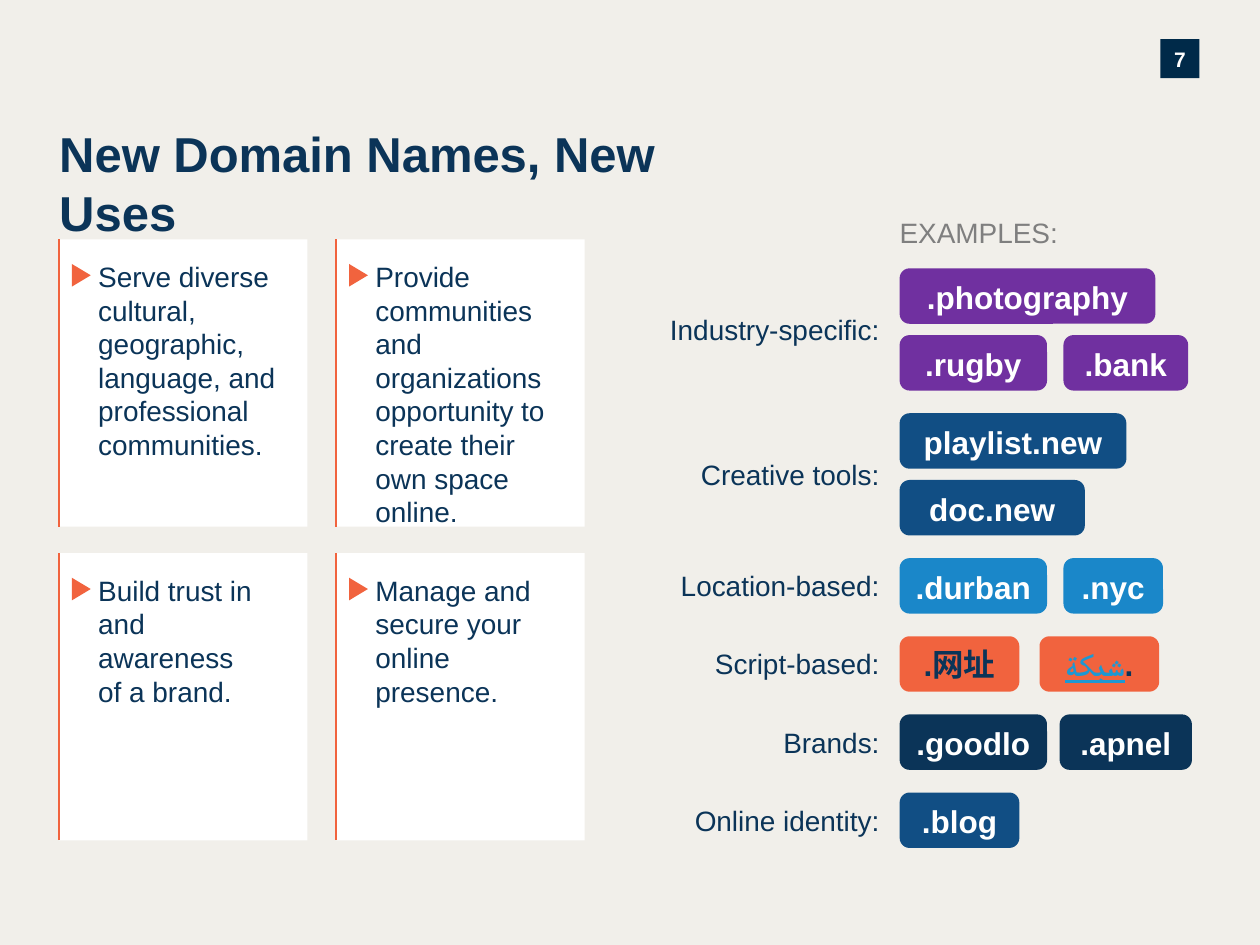
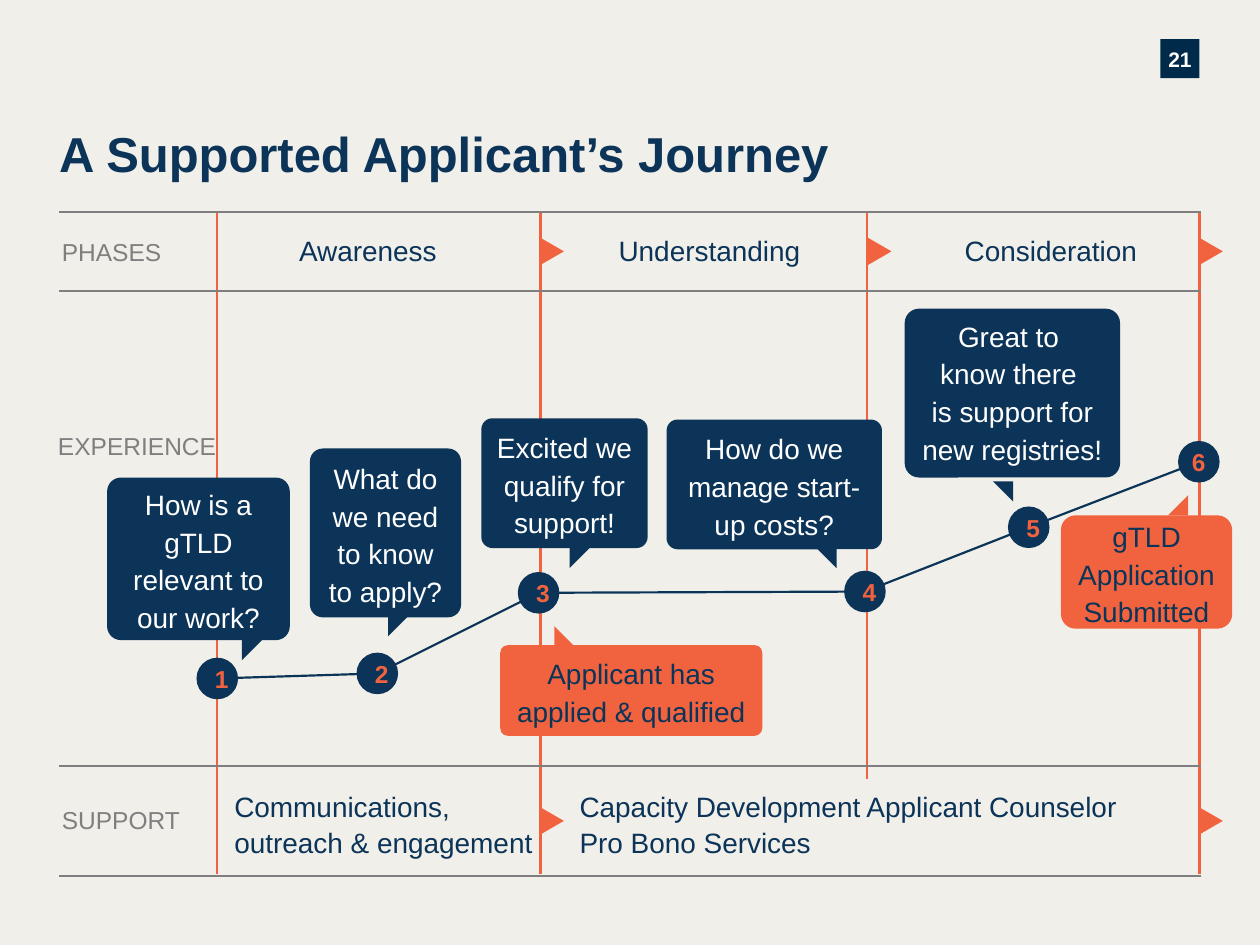
import copy
import dataclasses
import itertools
import typing

import lxml.etree
import pptx
import pptx.dml.color
import pptx.enum.shapes
import pptx.enum.text
import pptx.oxml.ns
import pptx.util

SHAPE = pptx.enum.shapes.MSO_SHAPE
ALIGN = pptx.enum.text.PP_ALIGN
ANCHOR = pptx.enum.text.MSO_ANCHOR
FIT = pptx.enum.text.MSO_AUTO_SIZE

FONT = "Arial"
COLORS = {
    "paper": "F1EFEA", "white": "FFFFFF", "ink": "0B3458", "badge": "002A49",
    "orange": "F1633E", "gray": "7F7F7F", "purple": "7030A0", "blue": "114E84",
    "sky": "1A87C9", "link": "1D98D3",
}

WIDTH, HEIGHT = pptx.util.Inches(10), pptx.util.Inches(7.5)
COLUMNS, ROWS = 100, 75


def col(count: float) -> int:
    return round(WIDTH * count / COLUMNS)


def row(count: float) -> int:
    return round(HEIGHT * count / ROWS)


def rgb(name: str) -> pptx.dml.color.RGBColor:
    return pptx.dml.color.RGBColor.from_string(COLORS[name])


class Box(typing.NamedTuple):
    """Left and width in grid columns, top and height in grid rows."""
    left: float
    top: float
    width: float
    height: float

    def place(self) -> tuple[int, int, int, int]:
        return col(self.left), row(self.top), col(self.width), row(self.height)


class Pill(typing.NamedTuple):
    text: str
    width: float
    left: float = 71.4


@dataclasses.dataclass
class Category:
    label: str
    color: str
    lines: list[list[Pill]]
    ink: str = "white"
    spacing: float = 1.06


@dataclasses.dataclass
class Callout:
    text: str
    box: Box
    tail: tuple[float, float]
    turn: int
    color: str = "ink"
    ink: str = "white"
    corner: float = 0.085
    bottom_margin: float = 0.8


class Step(typing.NamedTuple):
    left: float
    top: float
    margins: tuple[float, ...] = (1, 0.5, 1, 0.5)

    def center(self) -> tuple[float, float]:
        return self.left + STEP_SIZE / 2, self.top + STEP_SIZE / 2


def style_run(run, size: float, color: str, bold: bool, underline: bool = False) -> None:
    run.font.name = FONT
    run.font.size = pptx.util.Pt(size)
    run.font.bold = bold
    run.font.underline = underline
    run.font.color.rgb = rgb(color)


def write(shape, text: str, *, size: float = 16, color: str = "ink", bold: bool = False,
          underline: bool = False, align=ALIGN.LEFT, anchor=ANCHOR.TOP, spacing: float = 1,
          margins: tuple[float, ...] = (0, 0, 0, 0), fit=FIT.NONE) -> None:
    """Fill a shape with text: a newline starts a paragraph, a \\v breaks a line."""
    frame = shape.text_frame
    frame.word_wrap = True
    frame.auto_size = fit
    frame.vertical_anchor = anchor
    frame.margin_left, frame.margin_right = col(margins[0]), col(margins[2])
    frame.margin_top, frame.margin_bottom = row(margins[1]), row(margins[3])
    for index, line in enumerate(text.split("\n")):
        paragraph = frame.add_paragraph() if index else frame.paragraphs[0]
        paragraph.text = line
        paragraph.alignment = align
        paragraph.line_spacing = spacing
        for run in paragraph.runs:
            style_run(run, size, color, bold, underline)
        for line_break in paragraph._p.findall(pptx.oxml.ns.qn("a:br")):
            line_break.append(copy.deepcopy(paragraph.runs[0]._r.rPr))


def add_block(slide, kind, box: Box, color: str, turn: float = 0,
              corner: float | None = None):
    block = slide.shapes.add_shape(kind, *box.place())
    block.shadow.inherit = False
    block.fill.solid()
    block.fill.fore_color.rgb = rgb(color)
    block.line.fill.background()
    block.rotation = turn
    if corner is not None:
        block.adjustments[0] = corner
    return block


def add_text(slide, box: Box, text: str, **style):
    label = slide.shapes.add_textbox(*box.place())
    write(label, text, **style)
    return label


def add_rule(slide, start: tuple[float, float], end: tuple[float, float], color: str) -> None:
    rule = slide.shapes.add_connector(
        pptx.enum.shapes.MSO_CONNECTOR.STRAIGHT,
        col(start[0]), row(start[1]), col(end[0]), row(end[1]))
    rule.line.color.rgb = rgb(color)
    rule.line.width = pptx.util.Pt(1.25)
    lxml.etree.SubElement(rule._element.spPr, pptx.oxml.ns.qn("a:effectLst"))


def add_marker(slide, box: Box) -> None:
    """Orange triangle pointing right."""
    add_block(slide, SHAPE.ISOSCELES_TRIANGLE, box, "orange", turn=90)


def add_titled_slide(deck, title: str, title_box: Box, number: int):
    slide = deck.slides.add_slide(deck.slide_layouts.get_by_name("Title Only"))
    heading = slide.shapes.title
    heading.left, heading.top, heading.width, heading.height = title_box.place()
    write(heading, title, size=28, bold=True)
    badge = add_block(slide, SHAPE.RECTANGLE, Box(92.1, 3.1, 3.1, 3.1), "badge")
    write(badge, str(number), size=12, color="white", bold=True, align=ALIGN.CENTER,
          anchor=ANCHOR.MIDDLE, spacing=1.08)
    return slide


# Domain names: benefit cards and example pills

CARD_LEFT, CARD_TOP, CARD_WIDTH, CARD_HEIGHT = 4.7, 19, 19.7, 22.8
CARD_COLUMN_STEP, CARD_ROW_STEP = 22, 24.9
BENEFITS = [  # text, right margin
    ("Serve diverse\ncultural, geographic,\nlanguage, and professional communities.", 2.4),
    ("Provide communities and organizations opportunity to create their own space online.", 2),
    ("Build trust in and awareness of a brand.", 3.9),
    ("Manage and secure your online presence.", 2),
]

PILL_TOP, PILL_HEIGHT = 21.3, 4.4
LINE_STEP, CATEGORY_GAP = 5.3, 0.9
LABEL_HEIGHT = 2.7
ARABIC_WORD = "شبكة"
CATEGORIES = [
    Category("Industry-specific:", "purple", [
        [Pill(".photography", 20.3)],
        [Pill(".rugby", 11.7), Pill(".bank", 9.9, 84.4)]]),
    Category("Creative tools:", "blue", [
        [Pill("playlist.new", 18)], [Pill("doc.new", 14.7)]]),
    Category("Location-based:", "sky", [
        [Pill(".durban", 11.7), Pill(".nyc", 7.9, 84.4)]]),
    Category("Script-based:", "orange", [
        [Pill(".网址", 9.5), Pill(ARABIC_WORD, 9.5, 82.5)]], ink="ink", spacing=1),
    Category("Brands:", "ink", [
        [Pill(".goodlo", 11.7), Pill(".apnel", 10.5, 84.1)]]),
    Category("Online identity:", "blue", [[Pill(".blog", 9.5)]]),
]


def add_benefit(slide, index: int, text: str, right_margin: float) -> None:
    card_row, card_column = divmod(index, 2)
    left = CARD_LEFT + card_column * CARD_COLUMN_STEP
    top = CARD_TOP + card_row * CARD_ROW_STEP
    card = add_block(slide, SHAPE.RECTANGLE, Box(left, top, CARD_WIDTH, CARD_HEIGHT), "white")
    write(card, text, margins=(3.1, 1.6, right_margin, 2))
    add_marker(slide, Box(left + 0.85, top + 2.1, 1.8, 1.5))
    add_rule(slide, (left, top), (left, top + CARD_HEIGHT), "orange")


def add_pill(slide, pill: Pill, top: float, category: Category) -> None:
    is_arabic = pill.text == ARABIC_WORD
    block = add_block(slide, SHAPE.ROUNDED_RECTANGLE,
                      Box(pill.left, top, pill.width, PILL_HEIGHT),
                      category.color, corner=0.179)
    write(block, pill.text, size=18, bold=True, color="link" if is_arabic else category.ink,
          underline=is_arabic, align=ALIGN.CENTER, anchor=ANCHOR.MIDDLE,
          spacing=category.spacing)
    if is_arabic:
        dot = block.text_frame.paragraphs[0].add_run()
        dot.text = "."
        style_run(dot, 18, category.ink, bold=True)


def build_domain_names(deck) -> None:
    slide = add_titled_slide(deck, "New Domain Names, New Uses", Box(4.7, 9.8, 57.6, 5.6), 7)
    for index, (text, right_margin) in enumerate(BENEFITS):
        add_benefit(slide, index, text, right_margin)

    add_text(slide, Box(71.4, 17.1, 24.6, LABEL_HEIGHT), "EXAMPLES:", color="gray",
             fit=FIT.SHAPE_TO_FIT_TEXT)
    top = PILL_TOP
    for category in CATEGORIES:
        height = (len(category.lines) - 1) * LINE_STEP + PILL_HEIGHT
        add_text(slide, Box(46.4, top + (height - LABEL_HEIGHT) / 2, 23.4, LABEL_HEIGHT),
                 category.label, align=ALIGN.RIGHT, fit=FIT.SHAPE_TO_FIT_TEXT)
        for line in category.lines:
            for pill in line:
                add_pill(slide, pill, top, category)
            top += LINE_STEP
        top += CATEGORY_GAP


# Applicant's journey: phase grid, path of steps and callouts

PHASES = ["Awareness", "Understanding", "Consideration"]
PHASE_LEFT, PHASE_STEP = 17.1, 27.1
PHASE_EDGES = [(17.2, 69.4), (42.9, 69.4), (68.8, 61.8), (95.2, 69.4)]  # column, end row
BAND_ROWS = [16.8, 23.1, 60.8, 69.5]
BAND_LABELS = [("PHASES", 4.9, 18.8), ("EXPERIENCE", 4.6, 34.2), ("SUPPORT", 4.9, 63.9)]
MARKERS = [(42.7, 19), (68.7, 19), (95, 19), (42.7, 64.2), (95, 64.2)]
SUPPORT = [
    ("Communications, \voutreach & engagement", Box(17, 61.5, 25.9, 7.7), (1.6, 0, 0, 0)),
    ("Capacity Development Applicant Counselor \vPro Bono Services",
     Box(42.9, 61.5, 52.3, 7.7), (3.1, 0.5, 1, 0.5)),
]
STEP_SIZE = 3.3
STEPS = [Step(15.6, 52.2), Step(28.3, 51.8), Step(41.1, 45.4), Step(67, 45.3),
         Step(80, 40.2), Step(93.5, 35, margins=(0, 0, 0, 0))]
TAIL_SIZE = 1.6
# Quarter turns of a tail name the corner that holds its right angle
BOTTOM_LEFT, TOP_LEFT, TOP_RIGHT, BOTTOM_RIGHT = 0, 90, 180, 270
CALLOUTS = [
    Callout("How is a gTLD relevant to our work?", Box(8.5, 37.9, 14.5, 12.9),
            (19.2, 50.8), TOP_LEFT),
    Callout("What do we need to know to apply?", Box(24.6, 35.6, 12, 13.4),
            (30.8, 48.9), TOP_LEFT),
    Callout("Excited we qualify for support!", Box(38.2, 33.2, 13.2, 10.3),
            (45.2, 43.5), TOP_LEFT),
    Callout("How do we manage start-up costs?", Box(52.9, 33.3, 17.1, 10.3),
            (64.8, 43.5), TOP_RIGHT),
    Callout("Great to \vknow there \vis support for new registries!",
            Box(71.8, 24.5, 17.1, 13.4), (78.8, 38.2), TOP_RIGHT, bottom_margin=1.2),
    Callout("Applicant has applied & qualified", Box(39.7, 51.2, 20.8, 7.2),
            (44, 49.7), BOTTOM_LEFT, "orange", "ink"),
    Callout("gTLD Application Submitted", Box(84.2, 40.9, 13.6, 9),
            (92.7, 39.3), BOTTOM_RIGHT, "orange", "ink", corner=0.13),
]


def add_phase_grid(slide) -> None:
    for column, end in PHASE_EDGES:
        add_rule(slide, (column, BAND_ROWS[0]), (column, end), "orange")
    for band in BAND_ROWS:
        add_rule(slide, (4.7, band), (95.3, band), "gray")
    for left, top in MARKERS:
        add_marker(slide, Box(left, top, 2.2, 1.9))
    for text, left, top in BAND_LABELS:
        add_text(slide, Box(left, top, 13.1, 2.4), text, size=14, color="gray",
                 fit=FIT.SHAPE_TO_FIT_TEXT)
    for index, phase in enumerate(PHASES):
        add_text(slide, Box(PHASE_LEFT + index * PHASE_STEP, 17.5, 24.2, 4.6), phase,
                 align=ALIGN.CENTER, anchor=ANCHOR.MIDDLE, spacing=1.06)
    for text, box, margins in SUPPORT:
        add_text(slide, box, text, anchor=ANCHOR.MIDDLE, spacing=1.06, margins=margins)


def add_path(slide) -> None:
    for step, following in itertools.pairwise(STEPS):
        add_rule(slide, step.center(), following.center(), "ink")
    for number, step in enumerate(STEPS, start=1):
        dot = add_block(slide, SHAPE.OVAL, Box(step.left, step.top, STEP_SIZE, STEP_SIZE), "ink")
        write(dot, str(number), size=14, color="orange", bold=True, align=ALIGN.CENTER,
              anchor=ANCHOR.MIDDLE, margins=step.margins)


def add_callout(slide, callout: Callout) -> None:
    bubble = add_block(slide, SHAPE.ROUNDED_RECTANGLE, callout.box, callout.color,
                       corner=callout.corner)
    write(bubble, callout.text, color=callout.ink, align=ALIGN.CENTER, anchor=ANCHOR.MIDDLE,
          spacing=1.12, margins=(0.8, 0.8, 0.8, callout.bottom_margin))
    add_block(slide, SHAPE.RIGHT_TRIANGLE, Box(*callout.tail, TAIL_SIZE, TAIL_SIZE),
              callout.color, turn=callout.turn)


def build_journey(deck) -> None:
    slide = add_titled_slide(deck, "A Supported Applicant’s Journey",
                             Box(4.7, 9.8, 63.8, 5.8), 21)
    add_phase_grid(slide)
    add_path(slide)
    for callout in CALLOUTS:
        add_callout(slide, callout)


def main() -> None:
    deck = pptx.Presentation()
    deck.slide_width, deck.slide_height = WIDTH, HEIGHT
    backdrop = deck.slide_master.background.fill
    backdrop.solid()
    backdrop.fore_color.rgb = rgb("paper")
    build_domain_names(deck)
    build_journey(deck)
    deck.save("out.pptx")


if __name__ == "__main__":
    main()
